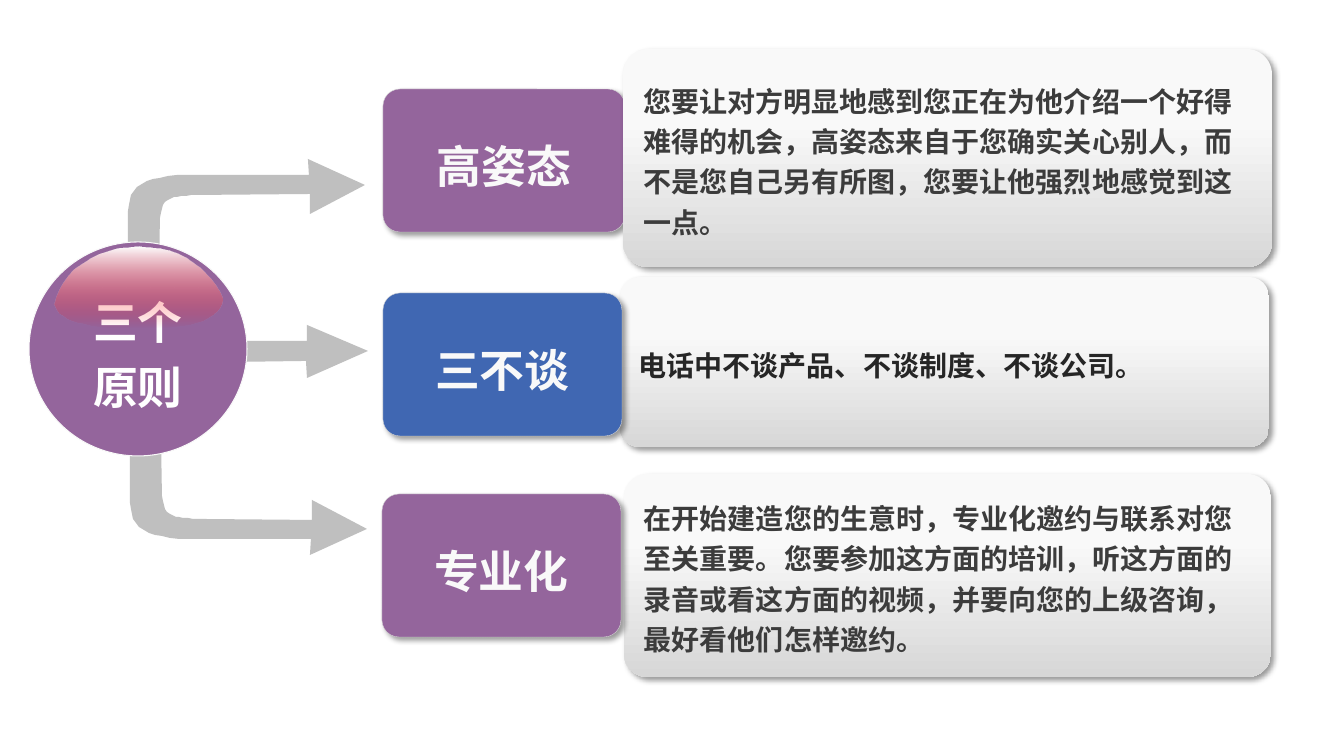
from pptx import Presentation
from pptx.dml.color import RGBColor
from pptx.enum.shapes import MSO_SHAPE
from pptx.enum.text import MSO_ANCHOR, PP_ALIGN
from pptx.oxml.ns import qn
from pptx.util import Pt
from lxml import etree

ROUND, OVAL = MSO_SHAPE.ROUNDED_RECTANGLE, MSO_SHAPE.OVAL
MIDDLE, LEFT, CENTER = MSO_ANCHOR.MIDDLE, PP_ALIGN.LEFT, PP_ALIGN.CENTER
PX = 914400 / 100.8

THEME = {
    "purple": "94659C", "blue": "4067B2", "arrow": "BFBFBF",
    "edge": "D7D7D7", "light": "F9F9F9", "white": "FFFFFF", "red": "FF0000",
    "dark": "3C3C3C", "black": "262626", "shadow": "000000",
    "font": "Noto Sans CJK SC", "latin": "Arial", "head": 32, "body": 20,
}

HUB = ("三个原则", (29, 242, 218, 214))
ROWS = [
    dict(label="三不谈", color="blue", box=(383, 293, 239, 143), ink="black",
         text="电话中不谈产品、不谈制度、不谈公司。",
         panel=(620, 277, 649, 170)),
    dict(label="专业化", color="purple", box=(382, 494, 239, 143), ink="dark",
         text="在开始建造您的生意时，专业化邀约与联系对您至关重要。您要参加这方面的培训，"
              "听这方面的录音或看这方面的视频，并要向您的上级咨询，最好看他们怎样邀约。",
         panel=(624, 474, 647, 203)),
    dict(label="高姿态", color="purple", box=(383, 89, 242, 143), ink="dark",
         text="您要让对方明显地感到您正在为他介绍一个好得难得的机会，高姿态来自于您确实关心别人，"
              "而不是您自己另有所图，您要让他强烈地感觉到这一点。",
         panel=(623, 49, 649, 218)),
]

ELBOW = [
    [(160, 373)], [(162, 496)], [(164, 518), (176, 518), (198, 519)],
    [(312, 520)], [(312, 500)], [(367, 529)], [(310, 555)], [(311, 539)],
    [(311, 539), (233, 539), (190, 539)], [(145, 538), (131, 528), (130, 503)],
    [(130, 370)], [(135, 349), (154, 351), (160, 373)],
]
STRAIGHT = [[p] for p in [(88, 364), (306, 361), (307, 378), (368, 351),
                          (307, 325), (307, 341), (87, 341)]]
GLOSS = [
    [(54, 304)], [(58, 275), (94, 247), (139, 247)],
    [(183, 247), (210, 272), (222, 299)], [(222, 318), (190, 328), (155, 328)],
    [(115, 328)], [(80, 327), (56, 318), (54, 304)],
]
MIRROR_Y, MIRROR_DX = 714, -2
CURVE_STEPS = 12


def rgb(name):
    return RGBColor.from_string(THEME[name])


def trace(steps):
    points = []
    for step in steps:
        if len(step) == 1:
            points += step
            continue
        a, (b, c, d) = points[-1], step
        for i in range(1, CURVE_STEPS + 1):
            t = i / CURVE_STEPS
            u = 1 - t
            points.append(tuple(
                u**3 * a[k] + 3 * u * u * t * b[k] + 3 * u * t * t * c[k] + t**3 * d[k]
                for k in (0, 1)))
    return points


def add_outline(s, points):
    builder = s.shapes.build_freeform(*points[0], scale=PX)
    builder.add_line_segments(points[1:], close=True)
    sp = builder.convert_to_shape()
    sp.shadow.inherit = False
    sp.line.fill.background()
    return sp


def set_solid(sp, color):
    sp.fill.solid()
    sp.fill.fore_color.rgb = rgb(color)


def set_gradient(sp, stops):
    sp.fill.gradient()
    sp.fill.gradient_angle = 270
    for stop, (position, color) in zip(sp.fill.gradient_stops, stops):
        stop.position = position
        stop.color.rgb = rgb(color)


def set_line(sp, color, width):
    sp.line.color.rgb = rgb(color)
    sp.line.width = Pt(width)


def add_shadow(sp):
    effects = sp._element.spPr.find(qn("a:effectLst"))
    shadow = etree.SubElement(effects, qn("a:outerShdw"), blurRad=str(Pt(4)),
                              dist=str(Pt(3)), dir="2700000", algn="tl", rotWithShape="0")
    color = etree.SubElement(shadow, qn("a:srgbClr"), val=THEME["shadow"])
    etree.SubElement(color, qn("a:alpha"), val="40000")


def add_text_shape(s, kind, box, text, size, ink, align, inset, font="font"):
    sp = s.shapes.add_shape(kind, *(round(v * PX) for v in box))
    sp.shadow.inherit = False
    sp.line.fill.background()
    tf = sp.text_frame
    side, edge = round(inset * PX), round(7 * PX)
    frame = dict(word_wrap=True, vertical_anchor=MIDDLE, margin_left=side,
                 margin_right=side, margin_top=edge, margin_bottom=edge)
    p = tf.paragraphs[0]
    r = p.add_run()
    formats = [
        (tf, frame),
        (p, dict(alignment=align, line_spacing=1.2)),
        (r, dict(text=text)),
        (r.font, dict(name=THEME[font], size=Pt(THEME[size]), bold=True)),
    ]
    for target, values in formats:
        for name, value in values.items():
            setattr(target, name, value)
    r.font.color.rgb = rgb(ink)
    etree.SubElement(r.font._element, qn("a:ea"), typeface=THEME["font"])
    return sp


def add_arrows(s):
    lower = trace(ELBOW)
    upper = [(x + MIRROR_DX, MIRROR_Y - y) for x, y in lower]
    for points in (lower, trace(STRAIGHT), upper):
        set_solid(add_outline(s, points), "arrow")


def add_hub(s):
    text, box = HUB
    sp = add_text_shape(s, OVAL, box, text, "head", "white", CENTER, 20, "latin")
    set_solid(sp, "purple")
    set_line(sp, "light", 0.75)
    gloss = add_outline(s, trace(GLOSS))
    set_gradient(gloss, [(0, "white"), (1, "red")])
    last = gloss._element.spPr.findall(".//" + qn("a:gs"))[-1]
    etree.SubElement(last[0], qn("a:alpha"), val="0")


def add_panel(s, row):
    sp = add_text_shape(s, ROUND, row["panel"], row["text"], "body", row["ink"], LEFT, 13)
    sp.adjustments[0] = 0.115
    set_gradient(sp, [(0.33, "light"), (1, "edge")])
    add_shadow(sp)


def add_label(s, row):
    sp = add_text_shape(s, ROUND, row["box"], row["label"], "head", "light", CENTER, 14)
    sp.adjustments[0] = 0.119
    set_solid(sp, row["color"])
    set_line(sp, "edge", 0.25)
    add_shadow(sp)


def main():
    prs = Presentation()
    prs.slide_width, prs.slide_height = round(1344 * PX), round(756 * PX)
    s = prs.slides.add_slide(prs.slide_layouts[6])
    add_arrows(s)
    *lower_rows, top_row = ROWS
    for row in lower_rows:
        add_panel(s, row)
        add_label(s, row)
    add_hub(s)
    add_label(s, top_row)
    add_panel(s, top_row)
    prs.save("out.pptx")


if __name__ == "__main__":
    main()
